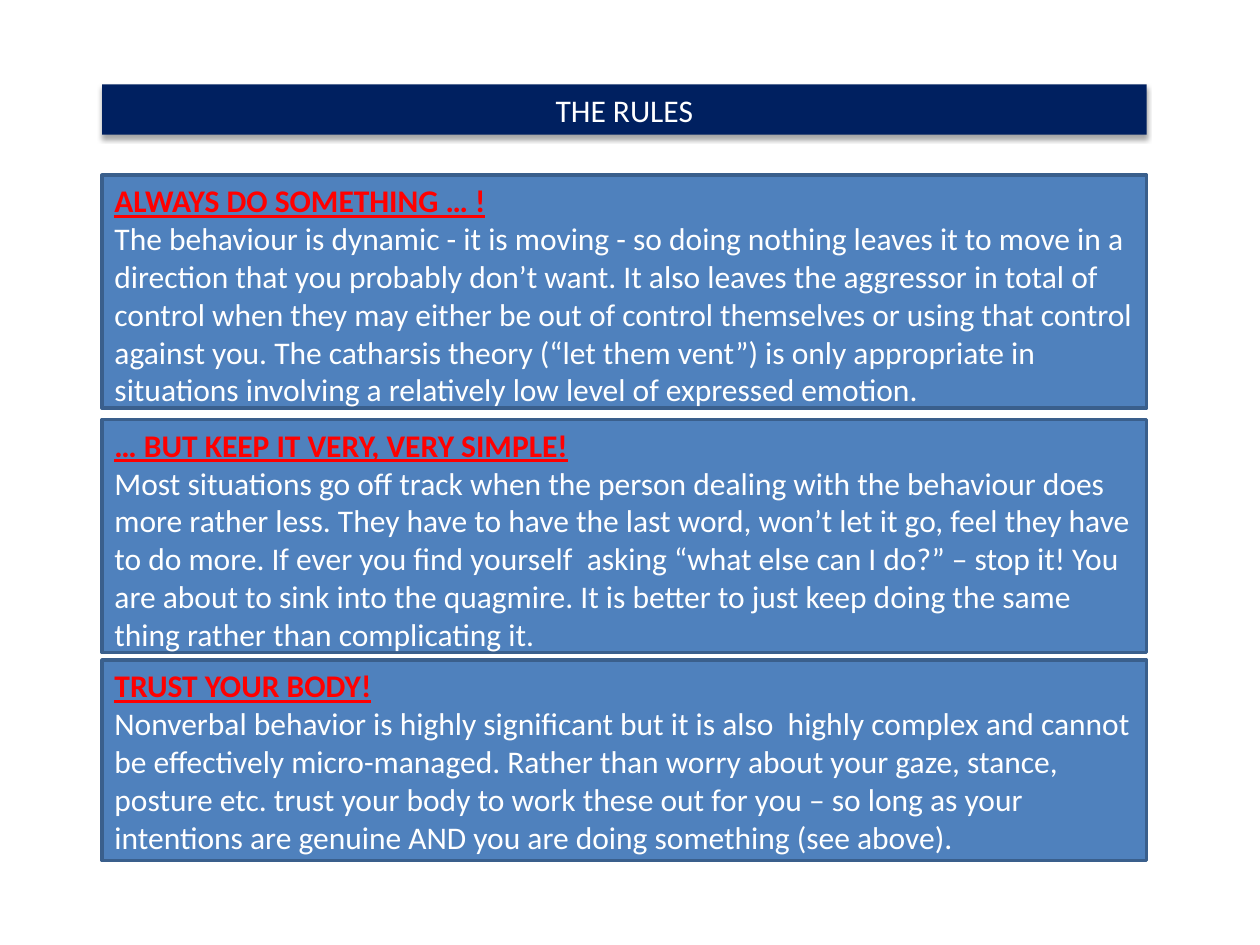
from lxml import etree
from pptx import Presentation
from pptx.dml.color import RGBColor
from pptx.enum import shapes, text
from pptx.oxml import ns
from pptx.util import Inches, Pt

LEFT, WIDTH = 0.81, 8.29
RULES = [
    (1.39, 1.85, "ALWAYS DO SOMETHING … !",
     "The behaviour is dynamic - it is moving - so doing nothing leaves it to move in a "
     "direction that you probably don’t want. It also leaves the aggressor in total of "
     "control when they may either be out of control themselves or using that control "
     "against you. The catharsis theory (“let them vent”) is only appropriate in "
     "situations involving a relatively low level of expressed emotion."),
    (3.33, 1.85, "… BUT KEEP IT VERY, VERY SIMPLE!",
     "Most situations go off track when the person dealing with the behaviour does "
     "more rather less. They have to have the last word, won’t let it go, feel they have "
     "to do more. If ever you find yourself  asking “what else can I do?” – stop it! You "
     "are about to sink into the quagmire. It is better to just keep doing the same "
     "thing rather than complicating it."),
    (5.24, 1.59, "TRUST YOUR BODY!",
     "Nonverbal behavior is highly significant but it is also  highly complex and cannot "
     "be effectively micro-managed. Rather than worry about your gaze, stance, "
     "posture etc. trust your body to work these out for you – so long as your "
     "intentions are genuine AND you are doing something (see above)."),
]


def color(value):
    return RGBColor.from_string(value)


def add_box(top, height, fill, lines, align):
    """Add a full-width rectangle with one white 18 pt paragraph per line."""
    box = page.shapes.add_shape(shapes.MSO_SHAPE.RECTANGLE, Inches(LEFT), Inches(top),
                                Inches(WIDTH), Inches(height))
    box.shadow.inherit = False
    box.fill.solid()
    box.fill.fore_color.rgb = color(fill)
    frame = box.text_frame
    frame.word_wrap = True
    frame.vertical_anchor = text.MSO_ANCHOR.TOP
    frame.text = "\n".join(lines)
    for para in frame.paragraphs:
        para.alignment = align
        font = para.runs[0].font
        font.name, font.size = "Calibri", Pt(18)
        font.color.rgb = color("FFFFFF")
    return box


deck = Presentation()
deck.slide_width, deck.slide_height = Inches(10), Inches(7.5)
page = deck.slides.add_slide(deck.slide_layouts[6])

title = add_box(0.67, 0.4, "002060", ["THE RULES"], text.PP_ALIGN.CENTER)
title.line.fill.background()
title.text_frame.auto_size = text.MSO_AUTO_SIZE.SHAPE_TO_FIT_TEXT
effects = title.element.spPr.find(ns.qn("a:effectLst"))
shadow = etree.SubElement(effects, ns.qn("a:outerShdw"), blurRad=str(Pt(3.1)),
                          dist=str(Pt(1.8)), dir="5400000", rotWithShape="0")
shade = etree.SubElement(shadow, ns.qn("a:srgbClr"), val="000000")
etree.SubElement(shade, ns.qn("a:alpha"), val="35000")

for top, height, heading, body in RULES:
    rule = add_box(top, height, "4F81BD", [heading, body], text.PP_ALIGN.LEFT)
    rule.line.color.rgb = color("3A5F8C")
    rule.line.width = Pt(2)
    font = rule.text_frame.paragraphs[0].runs[0].font
    font.bold = font.underline = True
    font.color.rgb = color("FF0000")

deck.save("out.pptx")
